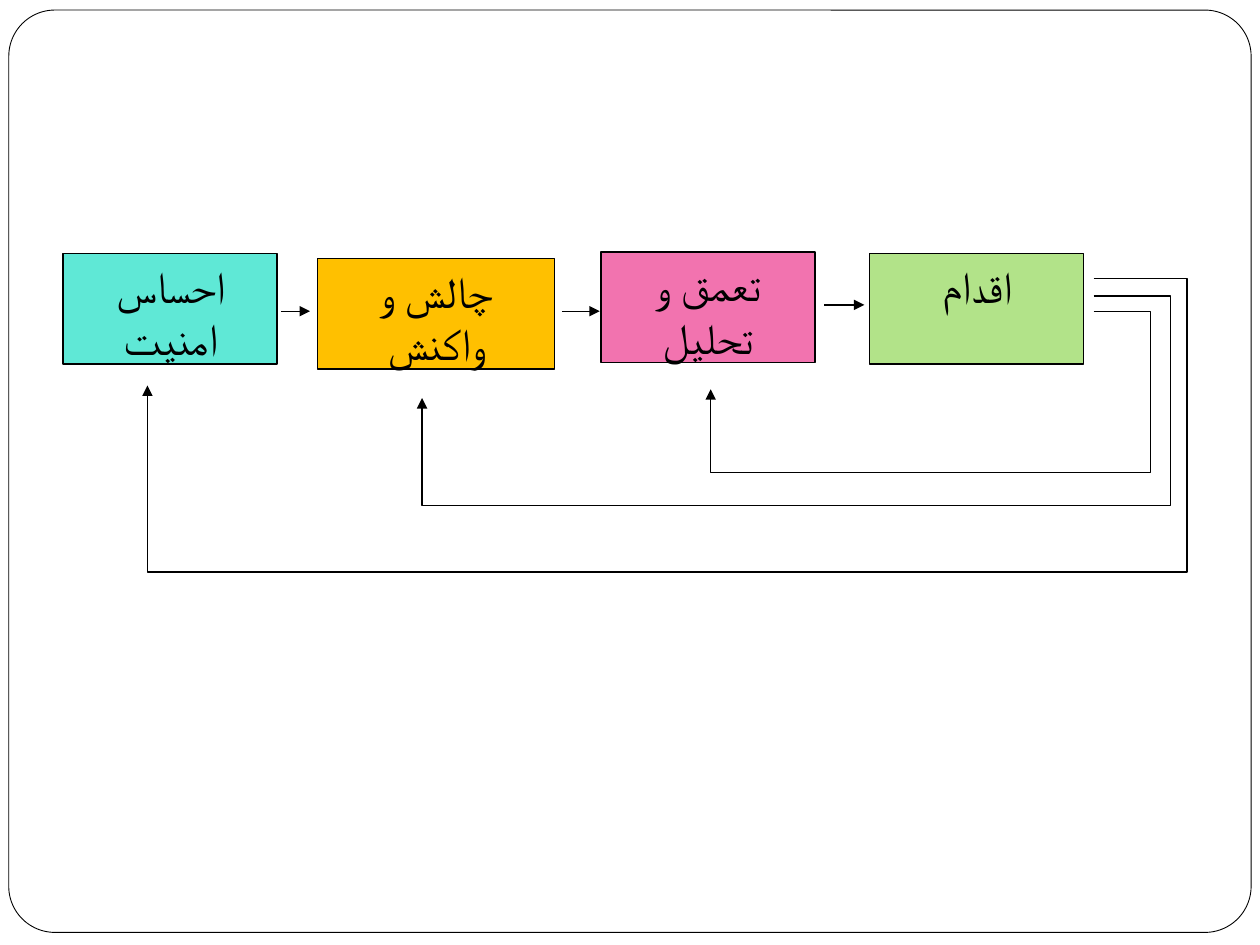
import pptx
import pptx.dml.color
import pptx.enum.shapes
import pptx.enum.text
import pptx.oxml.ns
import pptx.util
from lxml import etree
from pptx.util import Inches

RGBColor = pptx.dml.color.RGBColor
MSO_SHAPE = pptx.enum.shapes.MSO_SHAPE
qn = pptx.oxml.ns.qn

BLACK = RGBColor(0x00, 0x00, 0x00)
WHITE = RGBColor(0xFF, 0xFF, 0xFF)
GREEN = RGBColor(0xB2, 0xE3, 0x89)
PINK = RGBColor(0xF2, 0x73, 0xAF)
AMBER = RGBColor(0xFF, 0xC0, 0x00)
TURQUOISE = RGBColor(0x5F, 0xE8, 0xD6)


def set_line(line, width, arrow=False):
    """Make the line black; arrow adds a triangle at its end."""
    line.color.rgb = BLACK
    line.width = pptx.util.Pt(width)
    if arrow:
        ln = line.fill._xPr
        etree.SubElement(ln, qn("a:tailEnd"), type="triangle")


def add_box(shape_type, left, top, width, height, fill, line_width):
    sp = s.shapes.add_shape(shape_type, Inches(left), Inches(top),
                            Inches(width), Inches(height))
    sp.shadow.inherit = False
    sp.fill.solid()
    sp.fill.fore_color.rgb = fill
    set_line(sp.line, line_width)
    return sp


prs = pptx.Presentation()
prs.slide_width, prs.slide_height = Inches(10), Inches(7.5)
s = prs.slides.add_slide(prs.slide_layouts[6])

frame = add_box(MSO_SHAPE.ROUNDED_RECTANGLE, 0.07, 0.08, 9.86, 7.32, WHITE, 0.5)
frame.adjustments[0] = 0.05

# Stages: text, left, top, width, fill, space after
stages = [
    ("اقدام", 6.9, 2.01, 1.7, GREEN, 10),
    ("تعمق و تحلیل", 4.77, 2, 1.7, PINK, 0),
    ("چالش و واکنش", 2.52, 2.05, 1.88, AMBER, 10),
    ("احساس امنیت", 0.5, 2.01, 1.7, TURQUOISE, 10),
]
for text, left, top, width, fill, space_after in stages:
    sp = add_box(MSO_SHAPE.RECTANGLE, left, top, width, 0.88, fill, 0.75)
    tf = sp.text_frame
    tf.word_wrap = True
    tf.vertical_anchor = pptx.enum.text.MSO_ANCHOR.TOP
    p = tf.paragraphs[0]
    p.alignment = pptx.enum.text.PP_ALIGN.CENTER
    p.space_after = pptx.util.Pt(space_after)
    p._p.get_or_add_pPr().set("rtl", "1")
    r = p.add_run()
    r.text = text
    r.font.size = pptx.util.Pt(25)
    r.font.name = "Calibri"
    r.font.color.rgb = BLACK
    etree.SubElement(r.font._element, qn("a:cs"), typeface="Calibri")

# Forward arrows: start, end, height on the slide
for start, end, y in [(2.23, 2.46, 2.47), (4.46, 4.76, 2.47), (6.54, 6.86, 2.42)]:
    arrow = s.shapes.add_connector(pptx.enum.shapes.MSO_CONNECTOR.STRAIGHT,
                                   Inches(start), Inches(y), Inches(end), Inches(y))
    set_line(arrow.line, 0.75, arrow=True)
    etree.SubElement(arrow._element.spPr, qn("a:effectLst"))

# Feedback loops from the last stage: start y, right x, bottom y, end x, end y
loops = [
    (2.47, 9.13, 3.75, 5.64, 3.09),
    (2.35, 9.29, 4.01, 3.35, 3.16),
    (2.21, 9.42, 4.54, 1.17, 3.06),
]
for start_y, right, bottom, end_x, end_y in loops:
    corners = [(right, start_y), (right, bottom), (end_x, bottom), (end_x, end_y)]
    builder = s.shapes.build_freeform(Inches(8.68), Inches(start_y))
    builder.add_line_segments([(Inches(x), Inches(y)) for x, y in corners], close=False)
    loop = builder.convert_to_shape()
    loop.shadow.inherit = False
    loop.fill.background()
    set_line(loop.line, 0.75, arrow=True)

prs.save("out.pptx")
